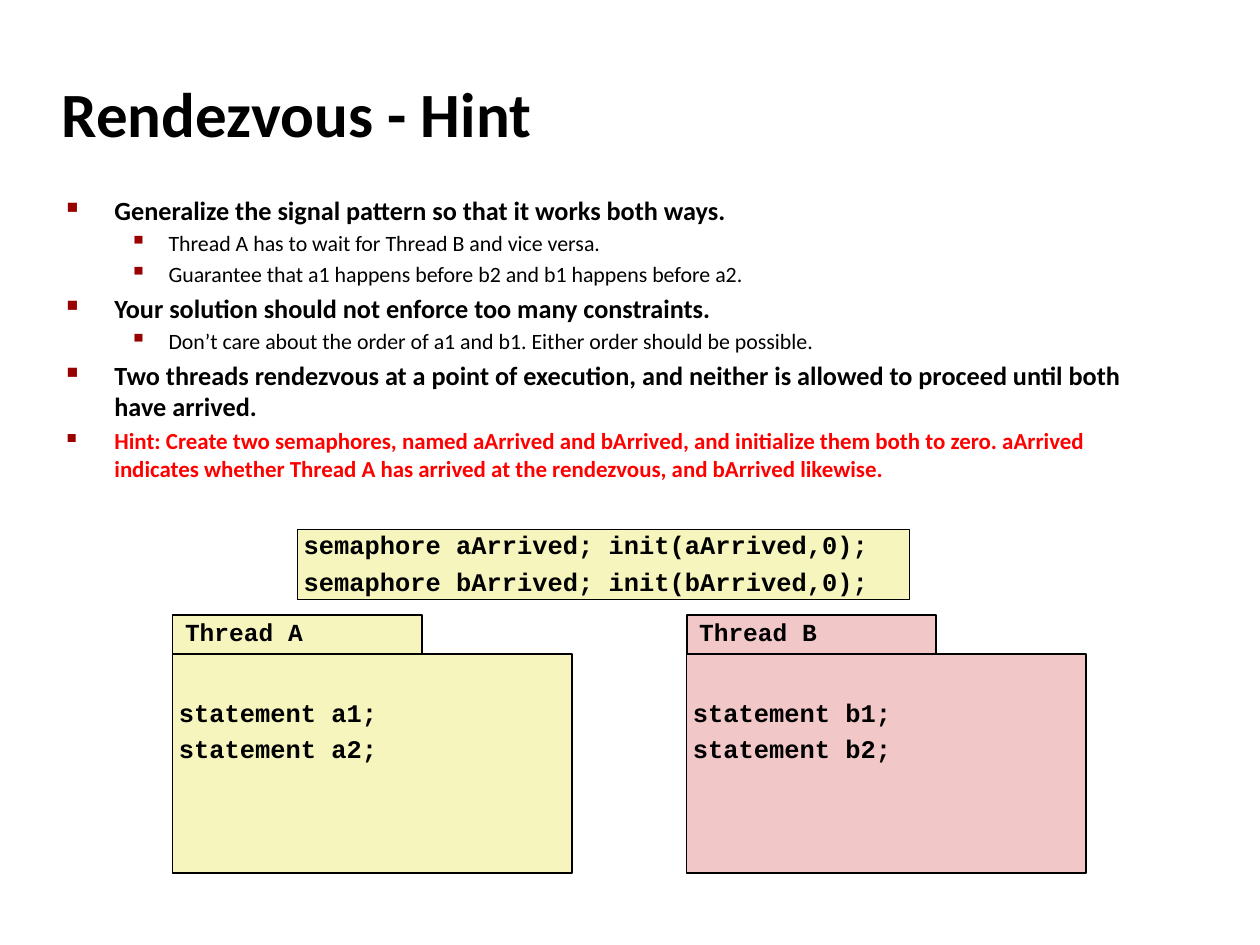
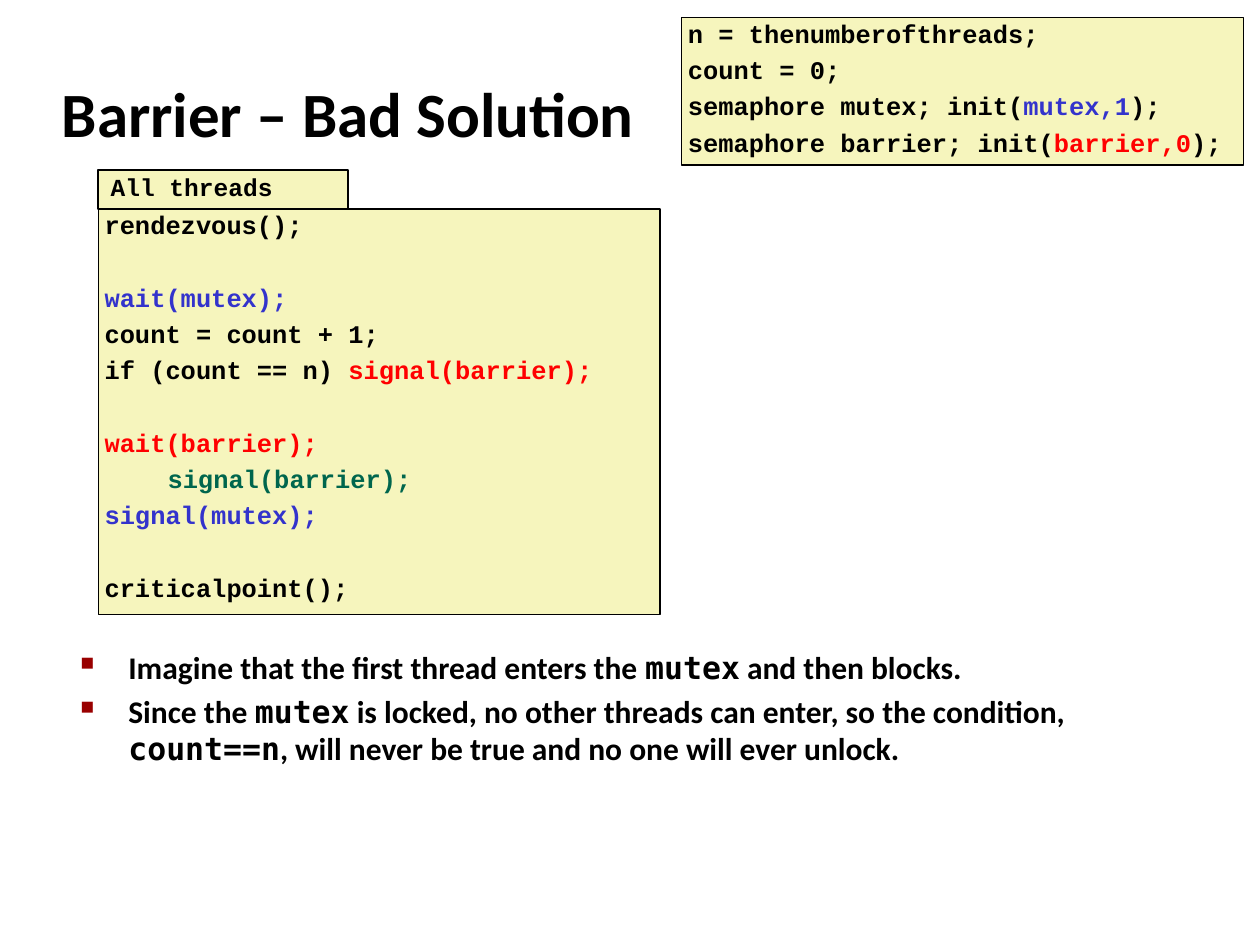
"""Build two slides on thread rendezvous and barriers."""
from typing import Any, NamedTuple

from lxml import etree
from pptx import Presentation
from pptx import util as u
from pptx.dml import color
from pptx.enum import shapes, text
from pptx.oxml import ns

BLACK, RED, BLUE, GREEN = "000000", "FF0000", "3333CC", "00664D"
CREAM, PINK, MAROON = "F6F5BD", "F1C7C7", "990000"
SANS, CODE, MONO = "Calibri", "Courier New", "DejaVu Sans Mono"
GAP, SKIP = 6.8, 27.5
TAB_W, TAB_H = 1.98, 0.31


class Run(NamedTuple):
    """A stretch of text in one colour and font."""
    words: str
    ink: str = BLACK
    face: str = CODE


class Line(NamedTuple):
    """A line of code with its space above and indent."""
    runs: list[Run]
    gap: float = GAP
    left: float = 0


class Point(NamedTuple):
    """A bullet point with its text size and level."""
    runs: list[Run]
    size: float = 15
    level: int = 0


class Level(NamedTuple):
    """The bullet style of one level."""
    left: float
    hang: float
    mark: str
    scale: int
    bold: bool


class Box(NamedTuple):
    """A place on the slide in inches."""
    left: float
    top: float
    width: float
    height: float


LEVELS = [Level(0.38, 0.38, "■", 60, True), Level(0.81, 0.31, "▪", 110, False)]


def paint(hue: str) -> color.RGBColor:
    """Turn a hex string into a colour."""
    return color.RGBColor.from_string(hue)


def apply(item: Any, **form: Any) -> None:
    """Set each format value on the item."""
    for name, value in form.items():
        setattr(item, name, value)


def plain(words: str, ink: str = BLACK) -> list[Run]:
    """Make a single run in the text font."""
    return [Run(words, ink, SANS)]


def code(words: str, ink: str = BLACK, gap: float = GAP, left: float = 0) -> Line:
    """Make a line of code in one colour."""
    return Line([Run(words, ink)], gap, left)


def place(box: Box) -> list[u.Length]:
    """Give the box in slide lengths."""
    return [u.Inches(side) for side in box]


def write(para: Any, runs: list[Run], size: float, bold: bool = True) -> None:
    """Fill a paragraph with runs."""
    for part in runs:
        run = para.add_run()
        run.text = part.words
        apply(run.font, name=part.face, size=u.Pt(size), bold=bold)
        run.font.color.rgb = paint(part.ink)


def rows(frame: Any, count: int) -> list[Any]:
    """Give the frame as many paragraphs as needed."""
    return [frame.paragraphs[0], *(frame.add_paragraph() for _ in range(count - 1))]


def start(deck: Any, title: str) -> Any:
    """Add a slide with its title."""
    slide = deck.slides.add_slide(deck.slide_layouts[5])
    head = slide.shapes.title
    left, top, width, height = place(Box(0.39, 0.48, 8.3, 0.83))
    apply(head, left=left, top=top, width=width, height=height)
    apply(head.text_frame, vertical_anchor=text.MSO_ANCHOR.MIDDLE, word_wrap=True,
          auto_size=text.MSO_AUTO_SIZE.NONE)
    para = head.text_frame.paragraphs[0]
    para.alignment = text.PP_ALIGN.LEFT
    write(para, plain(title), 36)
    return slide


def panel(slide: Any, box: Box, lines: list[Line], fill: str = CREAM, size: float = 14.5,
          edge: float = 0.75, side: float = 0.05, head: float = 0.05,
          anchor: Any = text.MSO_ANCHOR.TOP) -> None:
    """Draw a framed box of code."""
    rect = slide.shapes.add_shape(shapes.MSO_SHAPE.RECTANGLE, *place(box))
    rect.shadow.inherit = False
    rect.fill.solid()
    rect.fill.fore_color.rgb = paint(fill)
    rect.line.color.rgb = paint(BLACK)
    rect.line.width = u.Pt(edge)
    frame = rect.text_frame
    apply(frame, word_wrap=True, vertical_anchor=anchor,
          margin_left=u.Inches(side), margin_right=u.Inches(side),
          margin_top=u.Inches(head), margin_bottom=u.Inches(0.05))
    for para, line in zip(rows(frame, len(lines)), lines):
        apply(para, alignment=text.PP_ALIGN.LEFT, line_spacing=0.8, space_before=u.Pt(line.gap))
        if line.left:
            para._p.get_or_add_pPr().set("marL", str(u.Inches(line.left)))
        write(para, line.runs, size)


def folder(slide: Any, name: str, box: Box, lines: list[Line], fill: str = CREAM,
           head: float = 0.05) -> None:
    """Draw a code box with a name tab on top."""
    panel(slide, box, lines, fill, head=head)
    panel(slide, Box(box.left, box.top - TAB_H, TAB_W, TAB_H), [code(name)], fill,
          size=14, edge=1, side=0.1, anchor=text.MSO_ANCHOR.MIDDLE)


def bullet(para: Any, style: Level) -> None:
    """Give a paragraph its indent and mark."""
    props = para._p.get_or_add_pPr()
    props.set("marL", str(u.Inches(style.left)))
    props.set("indent", str(-u.Inches(style.hang)))
    tint = etree.SubElement(props, ns.qn("a:buClr"))
    etree.SubElement(tint, ns.qn("a:srgbClr"), val=MAROON)
    etree.SubElement(props, ns.qn("a:buSzPct"), val=str(style.scale * 1000))
    etree.SubElement(props, ns.qn("a:buChar"), char=style.mark)


def points(slide: Any, box: Box, items: list[Point]) -> None:
    """Draw a bullet list."""
    frame = slide.shapes.add_textbox(*place(box)).text_frame
    frame.word_wrap = True
    for para, item in zip(rows(frame, len(items)), items):
        style = LEVELS[item.level]
        apply(para, level=item.level, space_before=u.Pt(item.size * 0.2))
        bullet(para, style)
        write(para, item.runs, item.size, style.bold)


def hint(deck: Any) -> None:
    """Build the rendezvous slide."""
    slide = start(deck, "Rendezvous - Hint")
    points(slide, Box(0.43, 1.49, 8.64, 2.64), [
        Point(plain("Generalize the signal pattern so that it works both ways.")),
        Point(plain("Thread A has to wait for Thread B and vice versa."), 12.5, 1),
        Point(plain("Guarantee that a1 happens before b2 and b1 happens before a2."), 12.5, 1),
        Point(plain("Your solution should not enforce too many constraints.")),
        Point(plain("Don’t care about the order of a1 and b1. Either order should be possible."),
              12.5, 1),
        Point(plain("Two threads rendezvous at a point of execution, and neither is allowed "
                    "to proceed until both have arrived.")),
        Point(plain("Hint: Create two semaphores, named aArrived and bArrived, and initialize "
                    "them both to zero. aArrived indicates whether Thread A has arrived at the "
                    "rendezvous, and bArrived likewise.", RED), 13.1),
    ])
    panel(slide, Box(2.36, 4.2, 4.86, 0.56),
          [code(f"semaphore {key}Arrived; init({key}Arrived,0);") for key in "ab"])
    for key, left, fill in (("a", 1.37, CREAM), ("b", 5.45, PINK)):
        folder(slide, f"Thread {key.upper()}", Box(left, 5.19, 3.17, 1.74),
               [code(f"statement {key}{step};") for step in (1, 2)], fill, head=0.39)


def barrier(deck: Any) -> None:
    """Build the barrier slide."""
    slide = start(deck, "Barrier – Bad Solution")
    mutex = Run("mutex", face=MONO)
    points(slide, Box(0.54, 5.09, 8.85, 1.63), [
        Point([*plain("Imagine that the first thread enters the "), mutex,
               *plain(" and then blocks.")], 18),
        Point([*plain("Since the "), mutex,
               *plain(" is locked, no other threads can enter, so the condition, "),
               Run("count==n", face=MONO),
               *plain(", will never be true and no one will ever unlock.")], 18),
    ])
    folder(slide, "All threads", Box(0.78, 1.66, 4.46, 3.22), [
        code("rendezvous();"),
        code("wait(mutex);", BLUE, SKIP),
        code("count = count + 1;"),
        Line([Run("if (count == n) "), Run("signal(barrier);", RED)]),
        code("wait(barrier);", RED, SKIP),
        code("signal(barrier);", GREEN, left=0.5),
        code("signal(mutex);", BLUE),
        code("criticalpoint();", gap=SKIP),
    ])
    panel(slide, Box(5.41, 0.14, 4.46, 1.17), [
        code("n = thenumberofthreads;"),
        code("count = 0;"),
        Line([Run("semaphore mutex; init("), Run("mutex,1", BLUE), Run(");")]),
        Line([Run("semaphore barrier; init("), Run("barrier,0", RED), Run(");")]),
    ])


def main() -> None:
    """Build and save the deck."""
    deck = Presentation()
    apply(deck, slide_width=u.Inches(10), slide_height=u.Inches(7.5))
    hint(deck)
    barrier(deck)
    deck.save("out.pptx")


if __name__ == "__main__":
    main()
